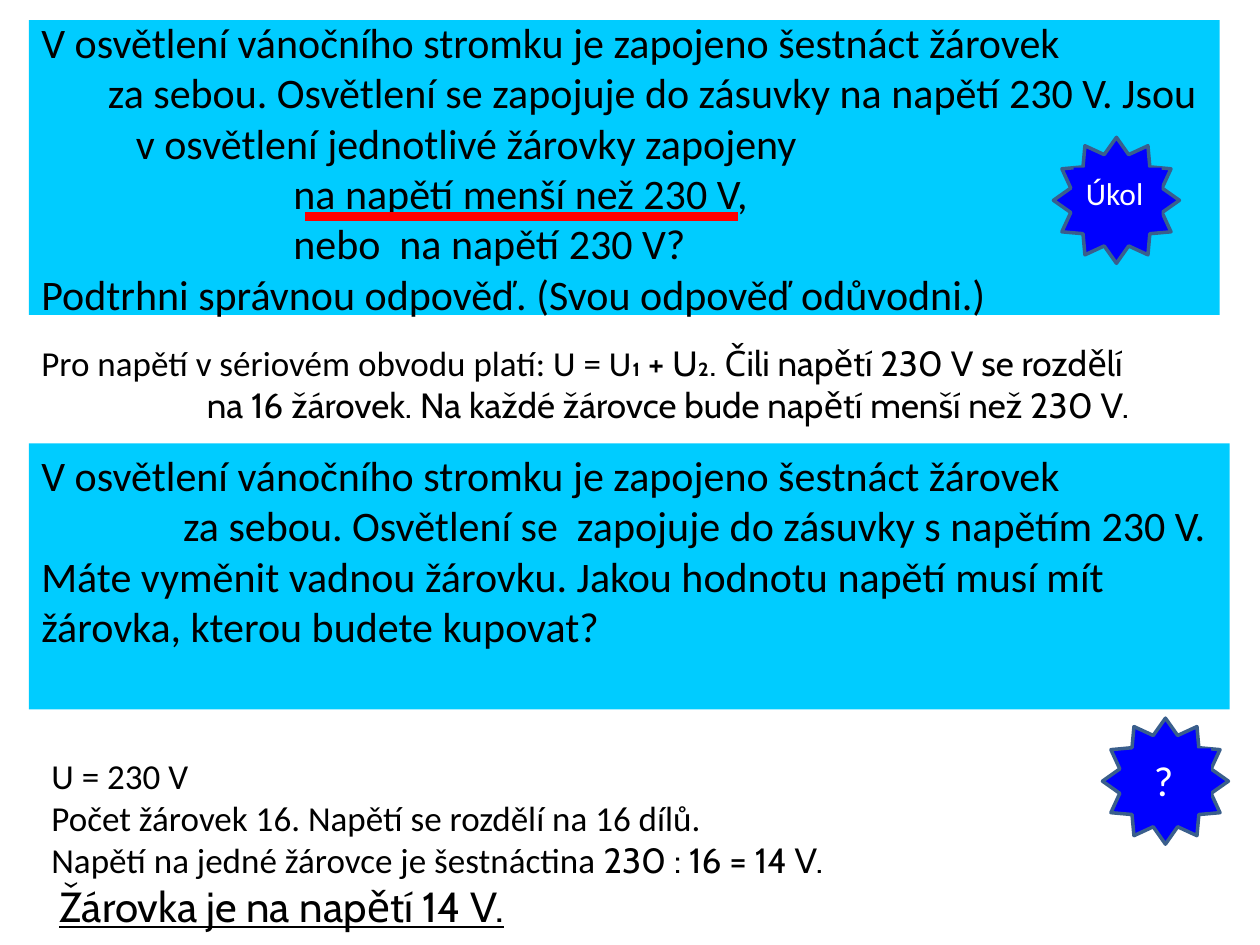
from pptx import Presentation
from pptx.dml.color import RGBColor
from pptx.enum.shapes import MSO_CONNECTOR, MSO_SHAPE
from pptx.enum.text import MSO_ANCHOR, PP_ALIGN
from pptx.oxml.ns import qn
from pptx.util import Pt
from lxml import etree

CYAN = RGBColor(0x00, 0xCC, 0xFF)
BLUE = RGBColor(0x00, 0x00, 0xFF)
STEEL = RGBColor(0x3A, 0x5F, 0x8C)
RED = RGBColor(0xFF, 0x00, 0x00)
BLACK = RGBColor(0x00, 0x00, 0x00)
WHITE = RGBColor(0xFF, 0xFF, 0xFF)
STAR, RECT = MSO_SHAPE.STAR_12_POINT, MSO_SHAPE.RECTANGLE
STRAIGHT = MSO_CONNECTOR.STRAIGHT
TOP, MIDDLE = MSO_ANCHOR.TOP, MSO_ANCHOR.MIDDLE
LEFT = PP_ALIGN.LEFT
BODY, ACCENT = "Calibri", "Cabin"


def write_text(tf, lines, size, color=BLACK):
    tf.word_wrap = True
    for i, (indent, parts) in enumerate(lines):
        p = tf.paragraphs[0] if i == 0 else tf.add_paragraph()
        p.alignment = LEFT
        p.font.size = Pt(size)
        p.font.color.rgb = color
        if indent:
            p._p.get_or_add_pPr().set("marL", str(Pt(indent)))
        for text, font in parts:
            r = p.add_run()
            r.text = text
            r.font.name = font


def add_text(s, box, lines, size, fill=None, anchor=TOP):
    sp = s.shapes.add_textbox(*map(Pt, box))
    if fill is not None:
        sp.fill.solid()
        sp.fill.fore_color.rgb = fill
    tf = sp.text_frame
    tf.vertical_anchor = anchor
    write_text(tf, lines, size)
    return tf


def add_question(s, box, lines, anchor):
    add_text(s, box, [(n, [(t, BODY)]) for n, t in lines], 24, CYAN, anchor)


def add_underline(s, x1, x2, y):
    line = s.shapes.add_connector(STRAIGHT, Pt(x1), Pt(y), Pt(x2), Pt(y))
    line.line.color.rgb = RED
    line.line.width = Pt(5)
    etree.SubElement(line._element.spPr, qn("a:effectLst"))


def add_badge(s, left, top, label, label_box, size):
    group = s.shapes.add_group_shape()
    dx, dy, width, height = label_box
    star = group.shapes.add_shape(STAR, Pt(left), Pt(top), Pt(72), Pt(72))
    tag = group.shapes.add_shape(
        RECT, Pt(left + dx), Pt(top + dy), Pt(width), Pt(height))
    for sp in (star, tag):
        sp.shadow.inherit = False
        sp.fill.solid()
        sp.fill.fore_color.rgb = BLUE
    star.line.color.rgb = STEEL
    star.line.width = Pt(2)
    tag.line.fill.background()
    tag.text_frame.vertical_anchor = TOP
    write_text(tag.text_frame, [(0, [(label, BODY)])], size, WHITE)


def add_solution(s, box):
    tf = add_text(s, box, [
        (0, [("U = 230 V", BODY)]),
        (0, [("Počet žárovek 16. Napětí se rozdělí na 16 dílů.", BODY)]),
        (0, [("Napětí na jedné žárovce je šestnáctina ", BODY),
             ("230 : 16 = 14 V.", ACCENT)]),
        (4.5, [("Žárovka je na napětí 14 V.", ACCENT)]),
    ], 20)
    result = tf.paragraphs[-1]
    result.font.size = Pt(24)
    result.runs[0].font.underline = True


def main():
    prs = Presentation()
    prs.slide_width, prs.slide_height = Pt(720), Pt(540)
    s = prs.slides.add_slide(prs.slide_layouts[6])

    add_question(s, (16.56, 11.5, 680.4, 168.5), [
        (0, "V osvětlení vánočního stromku je zapojeno šestnáct žárovek"),
        (38, "za sebou. Osvětlení se zapojuje do zásuvky na napětí 230 V. Jsou"),
        (54, "v osvětlení jednotlivé žárovky zapojeny"),
        (144, "na napětí menší než 230 V,"),
        (144, "nebo  na napětí 230 V?"),
        (0, "Podtrhni správnou odpověď. (Svou odpověď odůvodni.)"),
    ], MIDDLE)
    add_question(s, (16.56, 253.4, 686.2, 152), [
        (0, "V osvětlení vánočního stromku je zapojeno šestnáct žárovek"),
        (81, "za sebou. Osvětlení se  zapojuje do zásuvky s napětím 230 V."),
        (0, "Máte vyměnit vadnou žárovku. Jakou hodnotu napětí musí mít "
            "žárovka, kterou budete kupovat?"),
    ], TOP)
    add_badge(s, 602, 78.5, "Úkol", (11.5, 17.3, 50.4, 28.8), 18)
    add_badge(s, 630, 410.4, "?", (22.3, 17.3, 39.6, 36), 24)
    add_underline(s, 174.2, 421.9, 123.8)
    add_text(s, (16.56, 191.5, 680.4, 55.4), [
        (0, [("Pro napětí v sériovém obvodu platí: U = U", BODY),
             ("₁ + U₂. Čili napětí 230 V se rozdělí", ACCENT)]),
        (94.5, [("na 16 žárovek. Na každé žárovce bude napětí menší než 230 V.",
                 ACCENT)]),
    ], 20)
    add_solution(s, (22.3, 427.7, 607.7, 108.7))
    prs.save("out.pptx")


if __name__ == "__main__":
    main()
